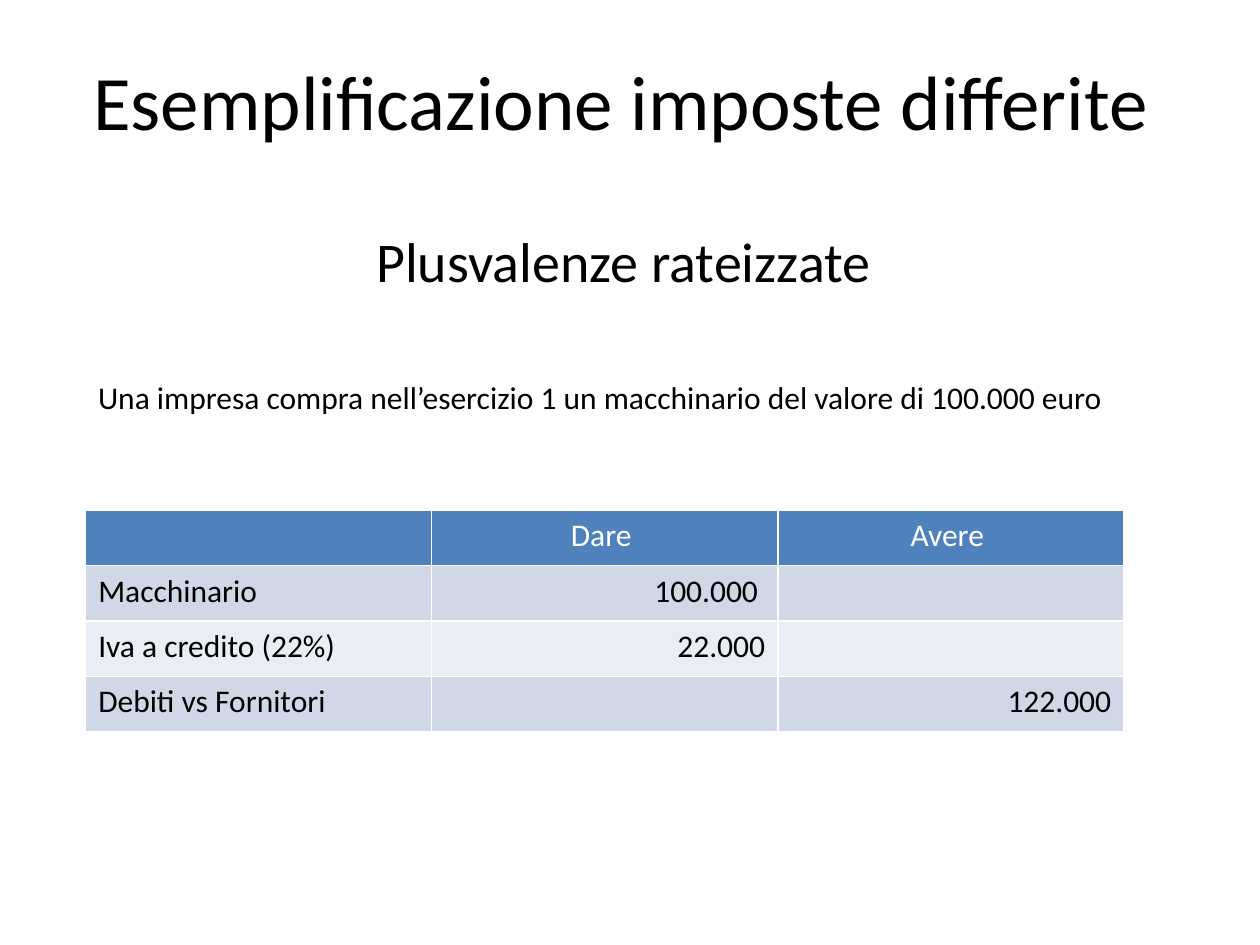
from dataclasses import dataclass

from pptx import Presentation
from pptx.dml.color import RGBColor
from pptx.enum.text import MSO_ANCHOR, PP_ALIGN
from pptx.util import Inches, Pt

LEFT, CENTER, RIGHT = PP_ALIGN.LEFT, PP_ALIGN.CENTER, PP_ALIGN.RIGHT
MIDDLE = MSO_ANCHOR.MIDDLE

BLACK = RGBColor(0x00, 0x00, 0x00)
WHITE = RGBColor(0xFF, 0xFF, 0xFF)
HEADER_BLUE = RGBColor(0x4F, 0x81, 0xBD)
BAND_DARK = RGBColor(0xD0, 0xD8, 0xE8)
BAND_LIGHT = RGBColor(0xE9, 0xED, 0xF4)

FONT = "Calibri"
TABLE_LEFT, TABLE_TOP = 0.68, 4.05
TABLE_WIDTH, ROW_HEIGHT = 8.24, 0.44


@dataclass(frozen=True)
class TextBlock:
    text: str
    left: float
    top: float
    width: float
    height: float
    size: int
    alignment: PP_ALIGN
    wrap: bool = True


TITLE = TextBlock("Esemplificazione imposte differite ", 0.5, 0.17, 9, 1.25, 44, CENTER)
TEXTS = [
    TextBlock("Plusvalenze rateizzate ", 0.5, 1.75, 9, 4.95, 32, CENTER),
    TextBlock(
        "Una impresa compra nell’esercizio 1 un macchinario del valore di 100.000 euro",
        TABLE_LEFT, 2.95, TABLE_WIDTH, 0.4, 18, LEFT, wrap=False,
    ),
]
ENTRIES = [
    ("", "Dare ", "Avere "),
    ("Macchinario", "100.000 ", ""),
    ("Iva a credito (22%)", "22.000", ""),
    ("Debiti vs Fornitori", "", "122.000"),
]


def format_paragraph(paragraph, size: int, color: RGBColor, alignment: PP_ALIGN) -> None:
    paragraph.alignment = alignment
    paragraph.font.size = Pt(size)
    for run in paragraph.runs:
        run.font.name = FONT
        run.font.size = Pt(size)
        run.font.bold = False
        run.font.color.rgb = color


def fill_text(shape, block: TextBlock) -> None:
    shape.text_frame.text = block.text
    shape.text_frame.word_wrap = block.wrap
    format_paragraph(shape.text_frame.paragraphs[0], block.size, BLACK, block.alignment)


def add_title(slide, block: TextBlock) -> None:
    title = slide.shapes.title
    title.left, title.top = Inches(block.left), Inches(block.top)
    title.width, title.height = Inches(block.width), Inches(block.height)
    fill_text(title, block)
    title.text_frame.vertical_anchor = MIDDLE


def add_text(slide, block: TextBlock) -> None:
    text_box = slide.shapes.add_textbox(
        Inches(block.left), Inches(block.top), Inches(block.width), Inches(block.height)
    )
    fill_text(text_box, block)


def row_fill(row: int) -> RGBColor:
    if row == 0:
        return HEADER_BLUE
    return BAND_DARK if row % 2 else BAND_LIGHT


def cell_alignment(row: int, column: int) -> PP_ALIGN:
    if column == 0:
        return LEFT
    return CENTER if row == 0 else RIGHT


def add_journal_table(slide, entries: list[tuple[str, ...]]) -> None:
    table = slide.shapes.add_table(
        len(entries), len(entries[0]), Inches(TABLE_LEFT), Inches(TABLE_TOP),
        Inches(TABLE_WIDTH), Inches(ROW_HEIGHT * len(entries)),
    ).table
    for row, values in enumerate(entries):
        for column, value in enumerate(values):
            cell = table.cell(row, column)
            cell.fill.solid()
            cell.fill.fore_color.rgb = row_fill(row)
            cell.text_frame.text = value
            format_paragraph(
                cell.text_frame.paragraphs[0], 18,
                WHITE if row == 0 else BLACK, cell_alignment(row, column),
            )


def main() -> None:
    presentation = Presentation()
    presentation.slide_width, presentation.slide_height = Inches(10), Inches(7.5)
    slide = presentation.slides.add_slide(presentation.slide_layouts[5])
    add_title(slide, TITLE)
    for block in TEXTS:
        add_text(slide, block)
    add_journal_table(slide, ENTRIES)
    presentation.save("out.pptx")


if __name__ == "__main__":
    main()
